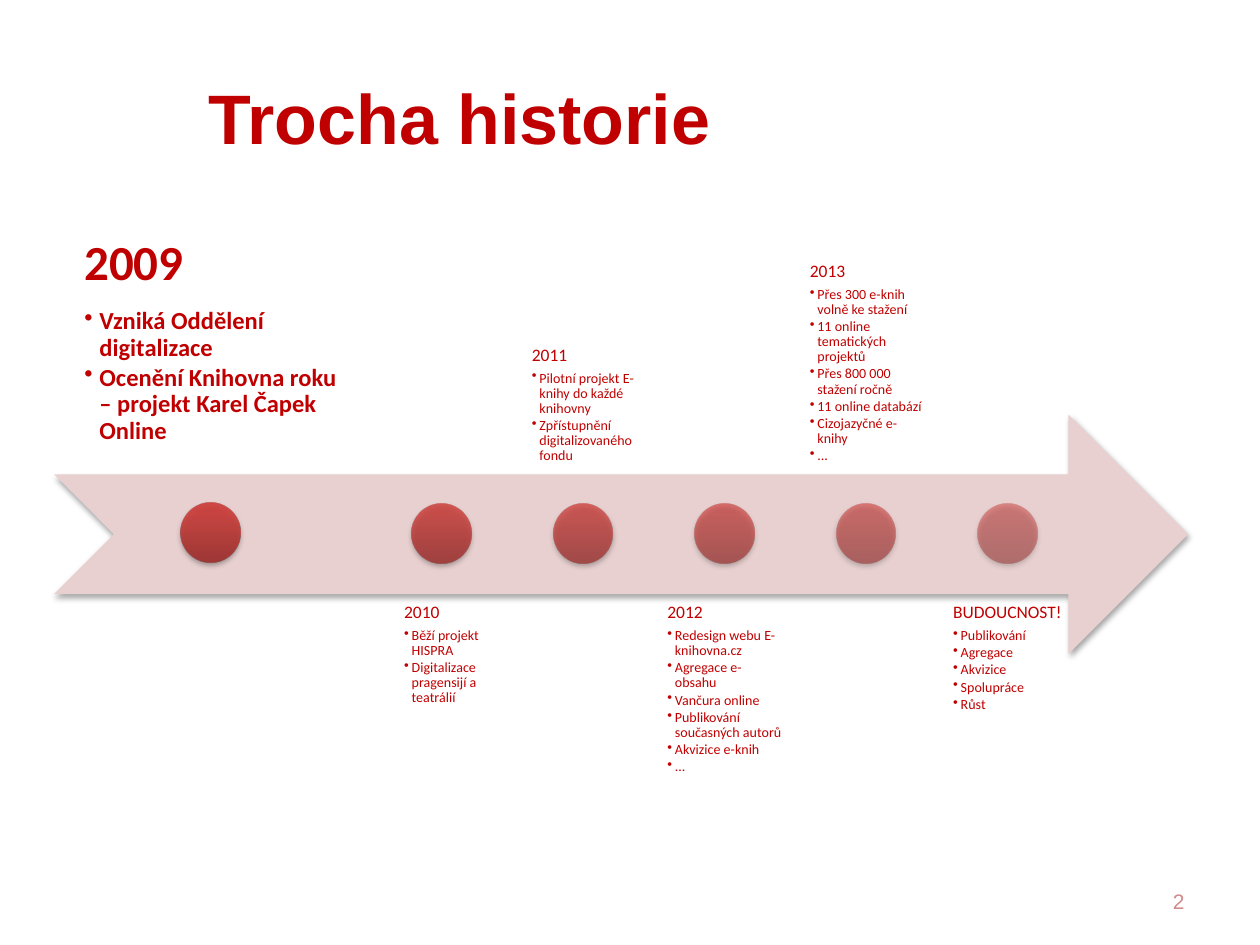
from lxml import etree
from pptx import Presentation
from pptx.dml.color import RGBColor
from pptx.enum.shapes import MSO_SHAPE
from pptx.enum.text import MSO_ANCHOR, PP_ALIGN
from pptx.oxml import parse_xml
from pptx.oxml.ns import nsdecls, qn
from pptx.util import Inches, Pt

ARROW, DOT = MSO_SHAPE.NOTCHED_RIGHT_ARROW, MSO_SHAPE.OVAL
TOP, MID, LOW = MSO_ANCHOR.TOP, MSO_ANCHOR.MIDDLE, MSO_ANCHOR.BOTTOM
LEFT, RIGHT = PP_ALIGN.LEFT, PP_ALIGN.RIGHT

# Content
TITLE = "Trocha historie"
PAGE = "2"
FIRST = ("2009", ["Vzniká Oddělení digitalizace",
                  "Ocenění Knihovna roku – projekt Karel Čapek Online"])
YEARS = [
    ("2010", ["Běží projekt HISPRA", "Digitalizace pragensijí a teatrálií"]),
    ("2011", ["Pilotní projekt E-knihy do každé knihovny",
              "Zpřístupnění digitalizovaného fondu"]),
    ("2012", ["Redesign webu E-knihovna.cz", "Agregace e-obsahu",
              "Vančura online", "Publikování současných autorů",
              "Akvizice e-knih", "..."]),
    ("2013", ["Přes 300 e-knih volně ke stažení",
              "11 online tematických projektů", "Přes 800 000 stažení ročně",
              "11 online databází", "Cizojazyčné e-knihy", "..."]),
    ("BUDOUCNOST!", ["Publikování", "Agregace", "Akvizice", "Spolupráce",
                     "Růst"]),
]

THEME = {
    "red": "C00000", "pale": "D28989", "band": "E8D0D0", "shade": "000000",
    "ball": [(0, "9C2F2D"), (80, "CB3E3A"), (100, "CE3B37")],
    "head": "Arial", "body": "Calibri",
    "title": 40, "page": 12,
    "big": {"size": 28, "sub": 14, "inset": 0.22, "indent": 0.12},
    "small": {"size": 10, "sub": 8, "inset": 0.08, "indent": 0.06},
}

# Layout rules, in inches
BAND = (0.43, 3.29, 9, 1.9)
BALL = 0.47
STEP = 1.1225
START = 2.97
WIDE, TALL = 1.07, 1.9

prs = Presentation()
prs.slide_width, prs.slide_height = Inches(10), Inches(7.5)
slide = prs.slides.add_slide(prs.slide_layouts[6])


def add_text(items, at, size, font=THEME["body"], color=THEME["red"],
             bold=False, anchor=MID, align=LEFT, inset=None, sub=None,
             indent=0):
    """Write a heading and, if sub is given, bullets of that size below it."""
    box = slide.shapes.add_textbox(*map(Inches, at))
    frame = box.text_frame
    frame.word_wrap, frame.vertical_anchor = True, anchor
    if inset is not None:
        frame.margin_left = frame.margin_right = Inches(inset)
        frame.margin_top = frame.margin_bottom = Inches(inset)
    if sub:
        frame._txBody.bodyPr.set("anchorCtr", "1")
    for i, words in enumerate(items):
        para = frame.paragraphs[0] if i == 0 else frame.add_paragraph()
        para.alignment = align
        if sub:
            para.line_spacing = 0.9
            props = para._p.get_or_add_pPr()
            after = etree.SubElement(props, qn("a:spcAft"))
            gap = etree.SubElement(after, qn("a:spcPct"))
            gap.set("val", "15000" if i else "35000")
            if i:
                para.level = 1
                props.set("marL", str(Inches(indent)))
                props.set("indent", str(-Inches(indent)))
                etree.SubElement(props, qn("a:buChar")).set("char", "•")
        run = para.add_run()
        run.text = words
        run.font.name, run.font.bold = font, bold
        run.font.size = Pt(sub if i else size)
        run.font.color.rgb = RGBColor.from_string(color)


def add_form(kind, at):
    """Add a shape without outline and with a soft shadow below."""
    form = slide.shapes.add_shape(kind, *map(Inches, at))
    form.line.fill.background()
    form.shadow.inherit = False
    glow = form._element.spPr.find(qn("a:effectLst"))
    glow.append(parse_xml(
        f'<a:outerShdw {nsdecls("a")} blurRad="{Pt(3.1)}" dist="{Pt(1.8)}" '
        f'dir="5400000" rotWithShape="0"><a:srgbClr val="{THEME["shade"]}">'
        '<a:alpha val="35000"/></a:srgbClr></a:outerShdw>'))
    return form


def add_ball(mid, top, alpha):
    """Add a shaded timeline dot centred on mid."""
    ball = add_form(DOT, (mid - BALL / 2, top, BALL, BALL))
    stops = "".join(
        f'<a:gs pos="{pos * 1000}"><a:srgbClr val="{color}">'
        f'<a:alpha val="{alpha * 1000}"/></a:srgbClr></a:gs>'
        for pos, color in THEME["ball"])
    fill = parse_xml(
        f'<a:gradFill {nsdecls("a")} rotWithShape="1"><a:gsLst>{stops}'
        '</a:gsLst><a:lin ang="16200000" scaled="0"/></a:gradFill>')
    ball._element.spPr.find(qn("a:prstGeom")).addnext(fill)


# Title and page number
add_text([TITLE], (1.56, 0.3, 7.94, 1.25), THEME["title"],
         font=THEME["head"], bold=True)
add_text([PAGE], (7.17, 6.95, 2.33, 0.4), THEME["page"], font=THEME["head"],
         color=THEME["pale"], align=RIGHT)

# Timeline arrow
band = add_form(ARROW, BAND)
band.fill.solid()
band.fill.fore_color.rgb = RGBColor.from_string(THEME["band"])

# First year, set large
year, notes = FIRST
add_text([year, *notes], (0.43, 1.87, 2.48, 1.88), bold=True, anchor=LOW,
         **THEME["big"])
add_ball(0.43 + 2.48 / 2, 3.99, 90)

# Later years, below and above the arrow in turn
for i, (year, notes) in enumerate(YEARS):
    left = START + i * STEP
    top, anchor = (1.86, LOW) if i % 2 else (4.71, TOP)
    add_text([year, *notes], (left, top, WIDE, TALL), anchor=anchor,
             **THEME["small"])
    add_ball(left + WIDE / 2, 4, 82 - 8 * i)

prs.save("out.pptx")
